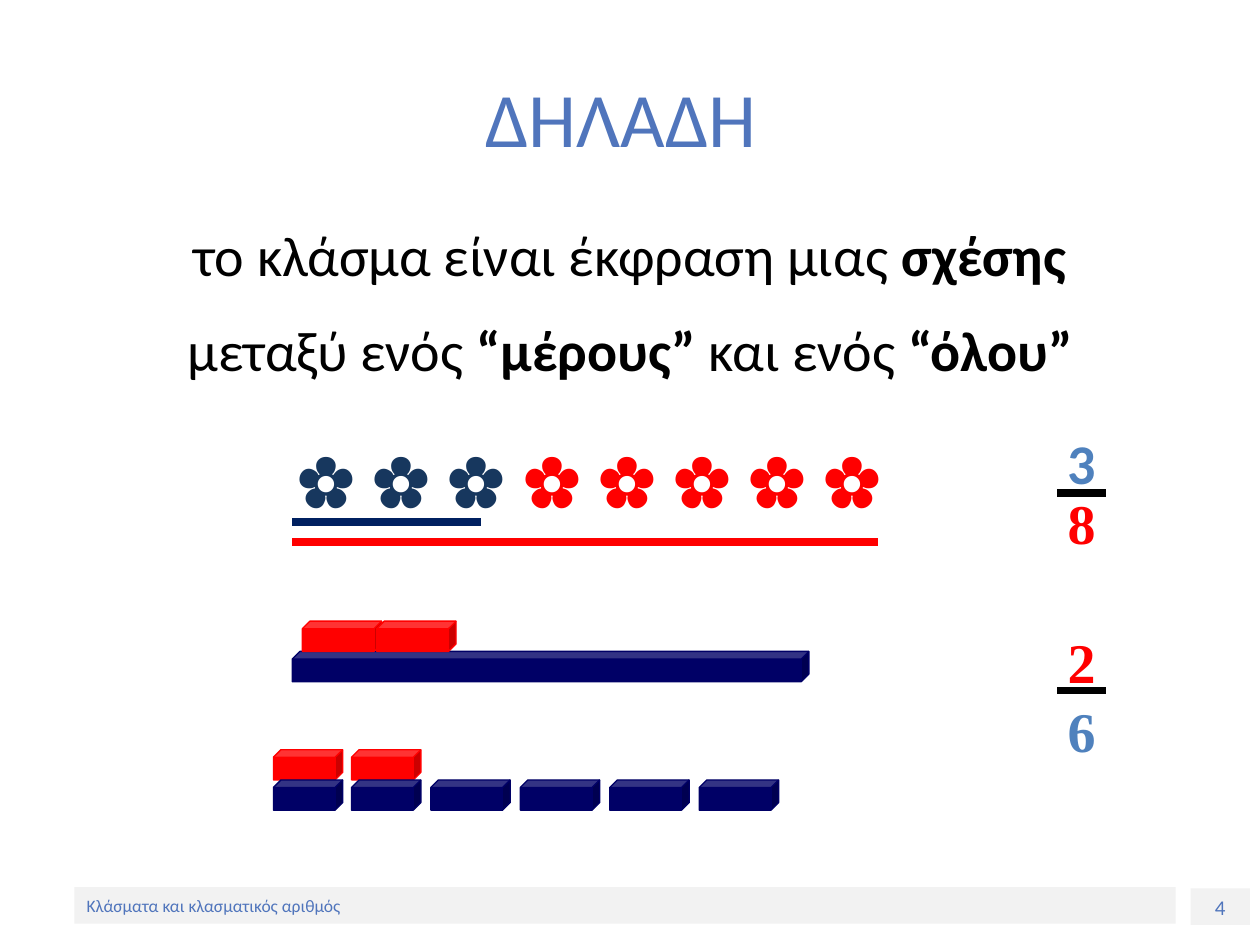
from pptx import Presentation
from pptx.dml.color import RGBColor
from pptx.enum.shapes import MSO_CONNECTOR, MSO_SHAPE
from pptx.enum.text import MSO_ANCHOR, PP_ALIGN
from pptx.oxml.ns import qn
from pptx.util import Inches, Pt
from lxml import etree

LINE = MSO_CONNECTOR.STRAIGHT
RECT, CUBE = MSO_SHAPE.RECTANGLE, MSO_SHAPE.CUBE
TOP, MIDDLE = MSO_ANCHOR.TOP, MSO_ANCHOR.MIDDLE
LEFT, CENTER = PP_ALIGN.LEFT, PP_ALIGN.CENTER

BLUE = RGBColor(0x50, 0x75, 0xBC)
STEEL = RGBColor(0x4F, 0x81, 0xBD)
PETAL = RGBColor(0x17, 0x37, 0x5E)
DEEP = RGBColor(0x00, 0x20, 0x60)
NAVY = RGBColor(0x00, 0x00, 0x66)
RED = RGBColor(0xFF, 0x00, 0x00)
GREY = RGBColor(0xF2, 0xF2, 0xF2)
BLACK = RGBColor(0x00, 0x00, 0x00)

SANS, SERIF = "Calibri", "Times New Roman"


def write(shape, lines, size, name=SANS, align=CENTER, anchor=TOP):
    """Fill a shape with lines of (text, colour, bold) runs."""
    frame = shape.text_frame
    frame.word_wrap = True
    frame.vertical_anchor = anchor
    for index, runs in enumerate(lines):
        para = frame.paragraphs[0] if index == 0 else frame.add_paragraph()
        para.alignment = align
        if index:
            para.space_before = Pt(size / 2)
        for text, color, bold in runs:
            run = para.add_run()
            run.text = text
            look = {"name": name, "size": Pt(size), "bold": bold}
            for key, value in look.items():
                setattr(run.font, key, value)
            run.font.color.rgb = color


def label(slide, box, lines, size, **look):
    """Place a text box."""
    shape = slide.shapes.add_textbox(*map(Inches, box))
    write(shape, lines, size, **look)


def bar(slide, left, top, width, color):
    """Draw a thick level line."""
    ends = map(Inches, (left, top, left + width, top))
    line = slide.shapes.add_connector(LINE, *ends)
    line.line.color.rgb = color
    line.line.width = Pt(4.5)
    etree.SubElement(line._element.spPr, qn("a:effectLst"))


def footer(slide, box, text, size, **look):
    """Draw a grey footer panel with its text."""
    panel = slide.shapes.add_shape(RECT, *map(Inches, box))
    panel.shadow.inherit = False
    panel.fill.solid()
    panel.fill.fore_color.rgb = GREY
    panel.line.fill.background()
    write(panel, [[(text, BLUE, False)]], size, **look)


def blocks(shapes, left, top, width, step, count, color):
    """Lay a row of equal blocks from a left top corner."""
    for index in range(count):
        box = (left + index * step, top, width, 0.24)
        block = shapes.add_shape(CUBE, *map(Inches, box))
        block.adjustments[0] = 0.25
        block.shadow.inherit = False
        block.fill.solid()
        block.fill.fore_color.rgb = color
        block.line.color.rgb = color
        block.line.width = Pt(0.75)


def flowers(slide, left, top, width, height):
    """Show three of eight flowers, underlined as part and whole."""
    runs = [("✿ ✿ ✿ ", PETAL, False), ("✿ ✿ ✿ ✿ ✿", RED, False)]
    label(slide, (left, top, width, height), [runs], 40, name=SERIF)
    bar(slide, left + 0.71, top + 0.72, 1.5, DEEP)
    bar(slide, left + 0.71, top + 0.88, 4.65, RED)


def rods(slide, left, top):
    """Compare two red blocks with a whole rod, then with six pieces."""
    blocks(slide.shapes, left + 0.15, top + 0.24, 4.1, 0, 1, NAVY)
    blocks(slide.shapes, left + 0.23, top, 0.63, 0.59, 2, RED)
    group = slide.shapes.add_group_shape().shapes
    blocks(group, left, top + 1.02, 0.55, 0.62, 2, RED)
    blocks(group, left + 1.25, top + 1.26, 0.63, 0.71, 4, NAVY)
    blocks(group, left, top + 1.26, 0.55, 0.62, 2, NAVY)


def ratio(slide, left, top, parts, drop, rule):
    """Stack two digits around a fraction bar."""
    for index, (digit, color, name) in enumerate(parts):
        box = (left, top + index * drop, 0.71, 0.63)
        label(slide, box, [[(digit, color, True)]], 32, name=name)
    bar(slide, left + 0.16, top + rule, 0.39, BLACK)


def main():
    """Build and save the slide."""
    deck = Presentation()
    deck.slide_width, deck.slide_height = Inches(10), Inches(7.5)
    slide = deck.slides.add_slide(deck.slide_layouts[6])

    footer(slide, (9.45, 7.05, 0.47, 0.29), "4", 12)
    footer(slide, (0.59, 7.04, 8.74, 0.29), "Κλάσματα και κλασματικός αριθμός",
           10, align=LEFT, anchor=MIDDLE)
    label(slide, (0.5, 0.3, 9, 1.25), [[("ΔΗΛΑΔΗ ", BLUE, False)]], 44,
          anchor=MIDDLE)
    lines = [
        [("το κλάσμα είναι έκφραση μιας ", BLACK, False),
         ("σχέσης", BLACK, True)],
        [("μεταξύ ενός ", BLACK, False), ("“μέρους” ", BLACK, True),
         ("και ενός ", BLACK, False), ("“όλου”", BLACK, True)],
    ]
    label(slide, (0.5, 1.7, 9, 4.95), lines, 32)
    flowers(slide, 1.61, 3.42, 6.14, 0.77)
    rods(slide, 2.17, 4.93)
    ratio(slide, 8.23, 3.35, [("3", STEEL, SANS), ("8", RED, SERIF)],
          0.48, 0.56)
    ratio(slide, 8.23, 4.93, [("2", RED, SERIF), ("6", STEEL, SERIF)],
          0.55, 0.55)
    deck.save("out.pptx")


if __name__ == "__main__":
    main()
